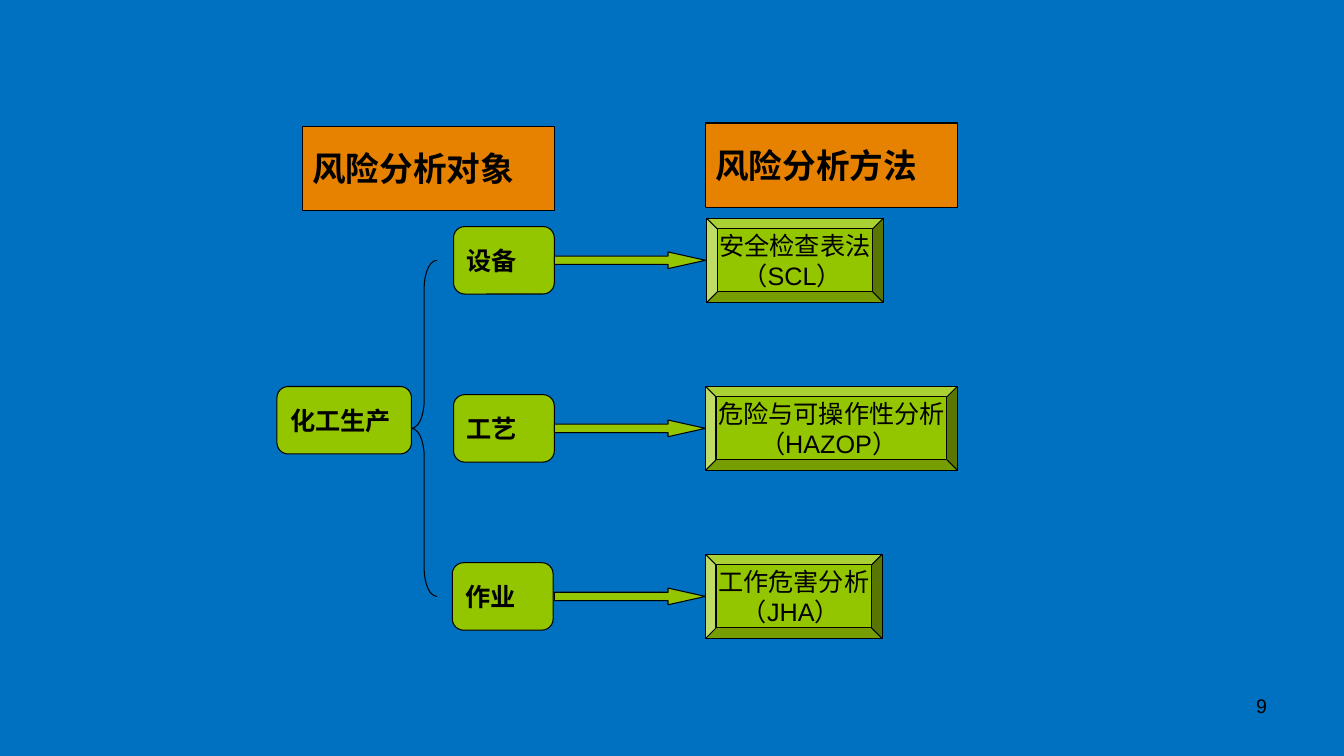
import pptx
import pptx.util
import pptx.dml.color
import pptx.enum.shapes
import pptx.enum.text

Cm, Pt = pptx.util.Cm, pptx.util.Pt
RGB = pptx.dml.color.RGBColor.from_string
SHAPE = pptx.enum.shapes.MSO_SHAPE
ALIGN = pptx.enum.text.PP_ALIGN
ANCHOR = pptx.enum.text.MSO_ANCHOR

# Content
ROOT = "化工生产"
# Heading, left, top (cm)
HEADINGS = [("风险分析对象", 7.62, 3.18), ("风险分析方法", 17.78, 3.1)]
# Object, its left, method lines, method left, method width (cm)
ROWS = [
    ("设备", 11.43, ["安全检查表法", "（SCL） "], 17.81, 4.45),
    ("工艺", 11.43, ["危险与可操作性分析", "（HAZOP） "], 17.78, 6.35),
    ("作业", 11.4, ["工作危害分析", "（JHA） "], 17.78, 4.45),
]
PAGE = "9"

THEME = {
    "font": "Arial", "background": RGB("0070C0"), "ink": RGB("000000"),
    "green": RGB("94C600"), "orange": RGB("E68200"),
    "heading": Pt(24), "body": Pt(18), "page": Pt(14), "line": Pt(0.75),
}

# Layout (cm)
FIRST_ROW, ROW_STEP = 6.56, 4.235
NODE_H, METHOD_H, ARROW_H = 1.7, 2.12, 0.42
ARROW_LEFT, ARROW_W = 13.97, 3.81
ROOT_LEFT, ROOT_TOP, ROOT_W = 6.98, 9.74, 3.39

deck = pptx.Presentation()
deck.slide_width, deck.slide_height = Cm(33.87), Cm(19.05)
slide = deck.slides.add_slide(deck.slide_layouts[6])
slide.background.fill.solid()
slide.background.fill.fore_color.rgb = THEME["background"]


def write(frame, lines, size, align, bold=False):
    formats = {"name": THEME["font"], "size": size, "bold": bold}
    for index, line in enumerate(lines):
        paragraph = frame.add_paragraph() if index else frame.paragraphs[0]
        paragraph.alignment = align
        run = paragraph.add_run()
        run.text = line
        for key, value in formats.items():
            setattr(run.font, key, value)
        run.font.color.rgb = THEME["ink"]


def draw(kind, left, top, width, height, fill=None, adjust=(), lines=(),
         size="body", align=ALIGN.LEFT, bold=False):
    part = slide.shapes.add_shape(kind, Cm(left), Cm(top), Cm(width), Cm(height))
    part.shadow.inherit = False
    for index, value in enumerate(adjust):
        part.adjustments[index] = value
    if fill:
        part.fill.solid()
        part.fill.fore_color.rgb = THEME[fill]
    else:
        part.fill.background()
    part.line.color.rgb = THEME["ink"]
    part.line.width = THEME["line"]
    if lines:
        part.text_frame.word_wrap = False
        part.text_frame.vertical_anchor = ANCHOR.MIDDLE
        write(part.text_frame, lines, THEME[size], align, bold)


# Root and brace spanning the rows
draw(SHAPE.ROUNDED_RECTANGLE, ROOT_LEFT, ROOT_TOP, ROOT_W, NODE_H, "green",
     lines=[ROOT], bold=True)
draw(SHAPE.LEFT_BRACE, ROOT_LEFT + ROOT_W, FIRST_ROW, 0.64,
     ROW_STEP * (len(ROWS) - 1), adjust=(1.11, 0.5))

# Object, arrow and method in each row
for row, (target, target_left, method, method_left, method_w) in enumerate(ROWS):
    middle = FIRST_ROW + row * ROW_STEP
    draw(SHAPE.ROUNDED_RECTANGLE, target_left, middle - NODE_H / 2, 2.54, NODE_H,
         "green", lines=[target], bold=True)
    draw(SHAPE.RIGHT_ARROW, ARROW_LEFT, middle - ARROW_H / 2, ARROW_W, ARROW_H,
         "green", adjust=(0.5, 2.25))
    draw(SHAPE.BEVEL, method_left, middle - METHOD_H / 2, method_w, METHOD_H,
         "green", adjust=(0.125,), lines=method, align=ALIGN.CENTER)

# Column headings
for heading, left, top in HEADINGS:
    draw(SHAPE.RECTANGLE, left, top, 6.35, 2.12, "orange", lines=[heading],
         size="heading", bold=True)

# Page number
page = slide.shapes.add_textbox(Cm(24.28), Cm(17.35), Cm(7.9), Cm(1.32))
page.text_frame.word_wrap = True
write(page.text_frame, [PAGE], THEME["page"], ALIGN.RIGHT)

deck.save("out.pptx")
